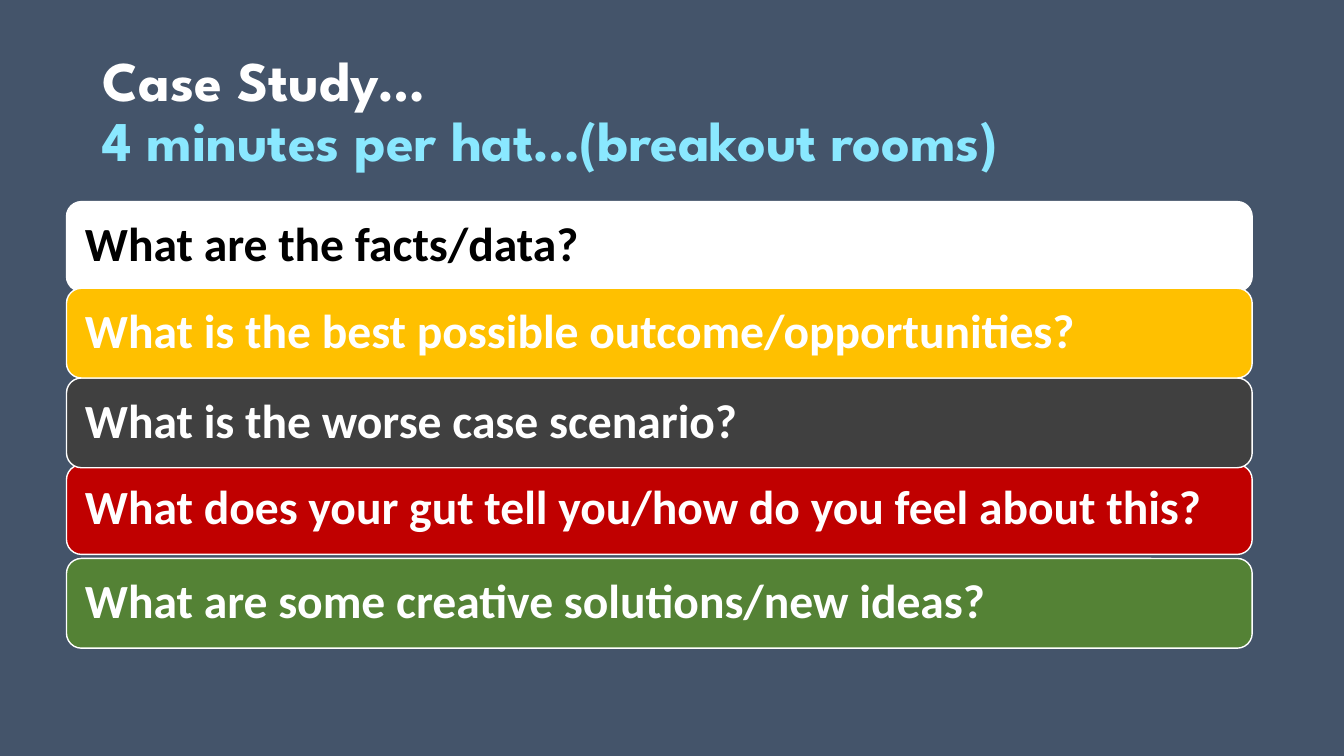
from pptx import Presentation
from pptx.dml.color import RGBColor
from pptx.enum import shapes, text
from pptx.util import Inches, Pt

SLATE = RGBColor(0x44, 0x54, 0x6A)
WHITE = RGBColor(0xFF, 0xFF, 0xFF)
BLACK = RGBColor(0x00, 0x00, 0x00)
AQUA = RGBColor(0x8A, 0xE8, 0xFF)
RED = RGBColor(0xC0, 0x00, 0x00)
GREY = RGBColor(0x40, 0x40, 0x40)
GOLD = RGBColor(0xFF, 0xC0, 0x00)
GREEN = RGBColor(0x54, 0x82, 0x35)


def write(para, words, size=34, font="Calibri", color=WHITE):
    para.alignment = text.PP_ALIGN.LEFT
    para.line_spacing = 0.9
    run = para.add_run()
    run.text = words
    run.font.size = Pt(size)
    run.font.name = font
    run.font.bold = True
    run.font.color.rgb = color


deck = Presentation()
deck.slide_width = Inches(13.33)
deck.slide_height = Inches(7.5)
slide = deck.slides.add_slide(deck.slide_layouts[5])
slide.background.fill.solid()
slide.background.fill.fore_color.rgb = SLATE

# Title in two lines
title = slide.shapes.title
title.left, title.top = Inches(0.92), Inches(0.4)
title.width, title.height = Inches(11.5), Inches(1.45)
title.fill.solid()
title.fill.fore_color.rgb = SLATE
frame = title.text_frame
frame.auto_size = text.MSO_AUTO_SIZE.NONE
frame.vertical_anchor = text.MSO_ANCHOR.MIDDLE
head = frame.paragraphs[0]
write(head, "Case Study…", size=40, font="League Spartan")
head.add_line_break()
write(head, "4 minutes per hat…(breakout rooms)", size=40,
      font="League Spartan", color=AQUA)

# One bar per hat, from back to front
hats = [
    (2, WHITE, BLACK, "What are the facts/data?"),
    (4.61, RED, WHITE, "What does your gut tell you/how do you feel about this?"),
    (3.75, GREY, WHITE, "What is the worse case scenario?"),
    (2.86, GOLD, WHITE, "What is the best possible outcome/opportunities?"),
    (5.54, GREEN, WHITE, "What are some creative solutions/new ideas?"),
]
for top, fill, ink, words in hats:
    bar = slide.shapes.add_shape(
        shapes.MSO_SHAPE.ROUNDED_RECTANGLE,
        Inches(0.66), Inches(top), Inches(11.76), Inches(0.89))
    bar.shadow.inherit = False
    bar.fill.solid()
    bar.fill.fore_color.rgb = fill
    bar.line.color.rgb = WHITE
    bar.line.width = Pt(1)
    frame = bar.text_frame
    frame.word_wrap = True
    frame.vertical_anchor = text.MSO_ANCHOR.MIDDLE
    frame.margin_left = frame.margin_right = Inches(0.14)
    frame.margin_top = frame.margin_bottom = Inches(0.14)
    write(frame.paragraphs[0], words, color=ink)

deck.save("out.pptx")
